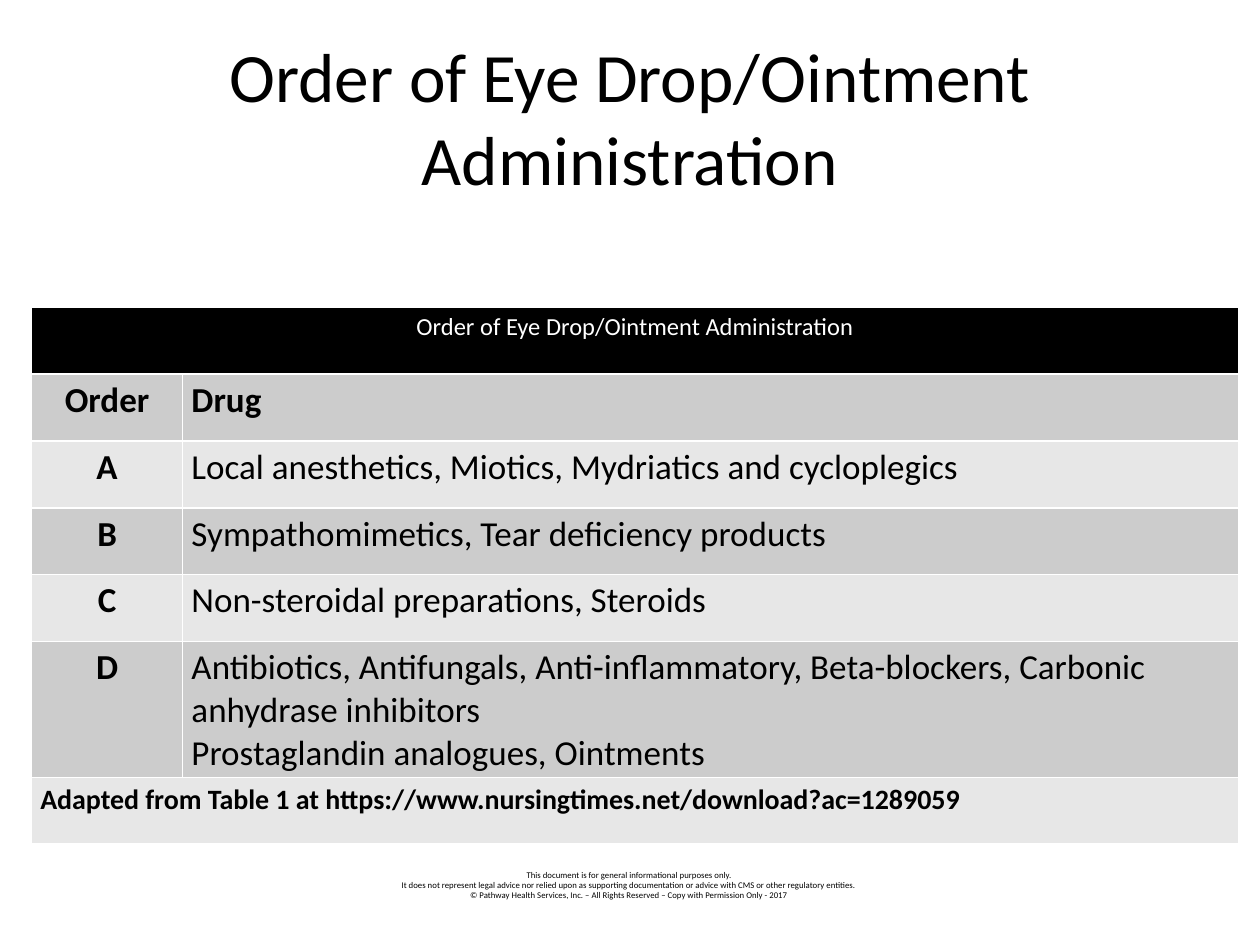
"""Build a slide with a table on the order of eye drop and ointment administration."""
from pptx import Presentation
from pptx.dml.color import RGBColor
from pptx.enum import text
from pptx.util import Inches, Pt


def style(frame, size, color, bold=False, align=text.PP_ALIGN.CENTER):
    """Format every paragraph and run of a text frame."""
    for para in frame.paragraphs:
        para.alignment = align
        for span in para.runs:
            span.font.name = "Calibri"
            span.font.size = Pt(size)
            span.font.bold = bold
            span.font.color.rgb = RGBColor.from_string(color)


deck = Presentation()
deck.slide_width, deck.slide_height = Inches(10), Inches(7.5)
page = deck.slides.add_slide(deck.slide_layouts[5])

title = page.shapes.title
title.left, title.top = Inches(0.5), Inches(0.3)
title.width, title.height = Inches(9), Inches(1.25)
title.text_frame.text = "Order of Eye Drop/Ointment Administration"
title.text_frame.vertical_anchor = text.MSO_ANCHOR.MIDDLE
style(title.text_frame, 39.6, "000000")

disclaimer = page.shapes.add_textbox(Inches(2.83), Inches(6.85), Inches(4.33), Inches(0.35))
disclaimer.text_frame.word_wrap = True
disclaimer.text_frame.text = (
    "This document is for general informational purposes only.\n"
    "It does not represent legal advice nor relied upon as supporting documentation "
    "or advice with CMS or other regulatory entities.\n"
    "© Pathway Health Services, Inc. – All Rights Reserved – Copy with Permission Only - 2017"
)
style(disclaimer.text_frame, 5, "000000")

rows = [
    ("Order of Eye Drop/Ointment Administration", ""),
    ("Order", "Drug"),
    ("A", "Local anesthetics, Miotics, Mydriatics and cycloplegics"),
    ("B", "Sympathomimetics, Tear deficiency products"),
    ("C", "Non-steroidal preparations, Steroids"),
    ("D", "Antibiotics, Antifungals, Anti-inflammatory, Beta-blockers, "
          "Carbonic anhydrase inhibitors\nProstaglandin analogues, Ointments"),
    ("Adapted from Table 1 at https://www.nursingtimes.net/download?ac=1289059", ""),
]
last = len(rows) - 1
table = page.shapes.add_table(
    len(rows), 2, Inches(0.25), Inches(2.44), Inches(9.58), Inches(4.28)
).table
table.columns[0].width, table.columns[1].width = Inches(1.2), Inches(8.38)

for r, values in enumerate(rows):
    table.rows[r].height = Inches(0.94 if r == 5 else 0.53)
    if r in (0, last):
        table.cell(r, 0).merge(table.cell(r, 1))
    for c, value in enumerate(values):
        cell = table.cell(r, c)
        cell.margin_left = cell.margin_right = Inches(0.07)
        cell.margin_top = cell.margin_bottom = Inches(0.04)
        cell.fill.solid()
        fill = "000000" if r == 0 else "CCCCCC" if r % 2 else "E7E7E7"
        cell.fill.fore_color.rgb = RGBColor.from_string(fill)
        if not value:
            continue
        cell.text_frame.text = value
        centred = c == 0 and r != last
        style(
            cell.text_frame,
            {0: 14, last: 16}.get(r, 20),
            "FFFFFF" if r == 0 else "000000",
            r == 1 or (c == 0 and r > 0),
            text.PP_ALIGN.CENTER if centred else text.PP_ALIGN.LEFT,
        )

deck.save("out.pptx")
